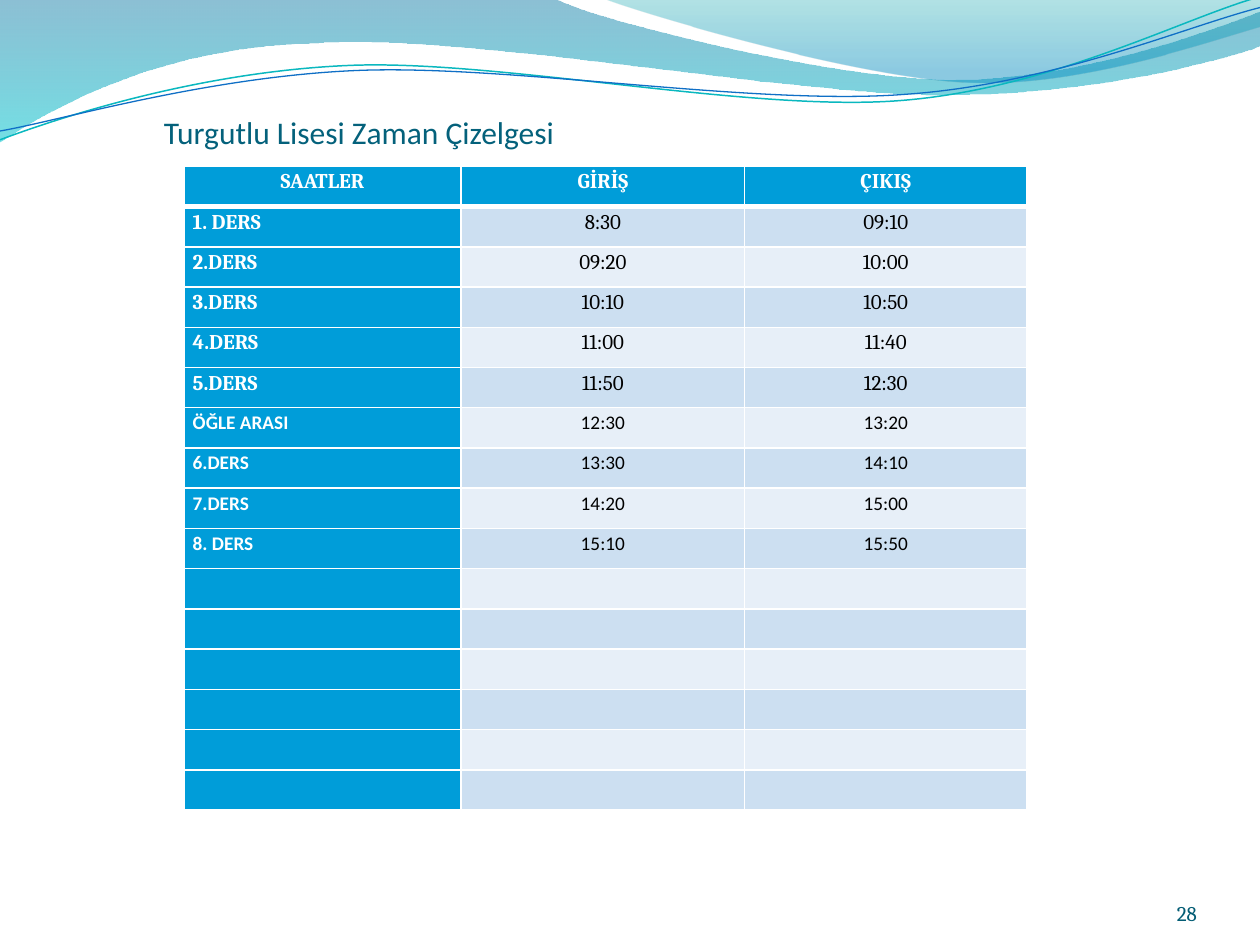
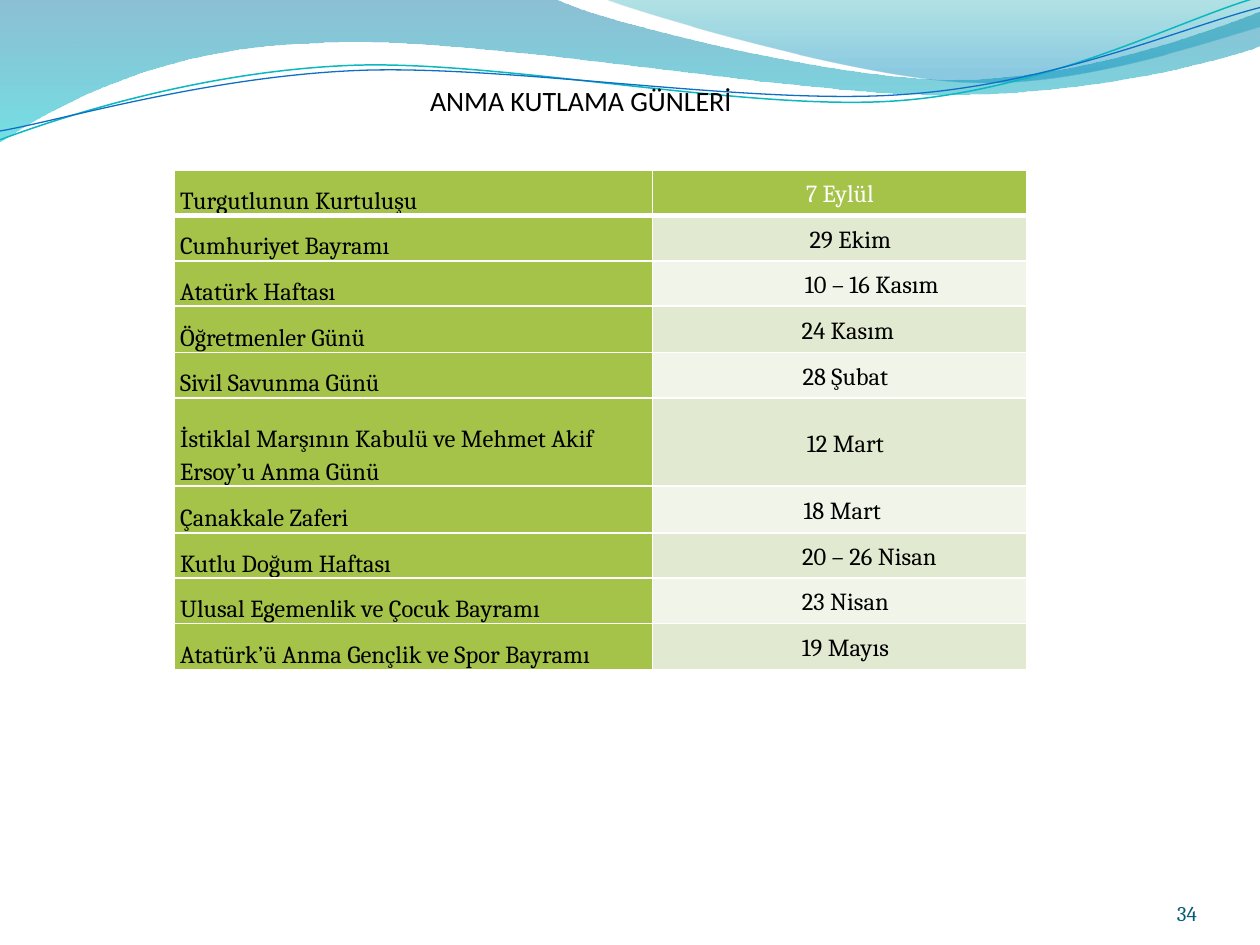
from lxml.etree import SubElement
from pptx import Presentation
from pptx.dml.color import RGBColor
from pptx.enum.text import MSO_ANCHOR, MSO_AUTO_SIZE, PP_ALIGN
from pptx.oxml.ns import qn
from pptx.util import Inches, Pt

# Colours and fonts
WHITE, BLACK = "FFFFFF", "000000"
TITLE_TEAL, NUMBER_TEAL = "04617B", "045D75"
BLUE, BLUE_BANDS = "009DD9", ("CCDFF1", "E7EFF8")
GREEN, GREEN_BANDS = "A5C249", ("E1E9D0", "F0F4E9")
SANS, SERIF = "Calibri", "Cambria"

# Waves: a start point, then straight (2 numbers) or curved (6 numbers) pieces
WAVE_FILLS = [
    ([(0, 0), (4.4, -0.01), (4.76, 0.17, 6.64, 0.63, 7.58, 0.63),
      (8.53, 0.63, 9.58, 0.26, 10, 0.09), (10.01, 0.36),
      (9.83, 0.44, 8.7, 0.76, 7.46, 0.75), (6.22, 0.75, 3.82, 0.28, 2.57, 0.34),
      (1.29, 0.36, 0.46, 0.83, -0.01, 1.13), (0, 0)],
     [(0, "0074A1", 45), (1, "00C6CF", 55)]),
    ([(4.79, -0.01), (5.09, 0.11, 6.82, 0.62, 7.69, 0.65),
      (8.56, 0.69, 9.61, 0.32, 10, 0.21), (10, 0), (4.79, -0.01)],
     [(0, "00A1A9", 30), (0.8, "008BBF", 45)]),
]
WAVE_LINES = [
    ([(0, 1.11), (0.48, 0.93, 1.58, 0.57, 2.77, 0.52),
      (3.95, 0.47, 5.93, 0.89, 7.13, 0.8), (8.33, 0.71, 9.38, 0.15, 9.98, -0.02)],
     "0AB8BF", 0.85),
    ([(0, 1.04), (0.47, 0.96, 1.64, 0.61, 2.83, 0.56),
      (4.03, 0.51, 5.97, 0.84, 7.17, 0.75), (8.36, 0.67, 9.41, 0.21, 10, 0.06)],
     "0F6FC6", 0.75),
]

# Slide contents
LESSON_HOURS = [
    ("SAATLER", "GİRİŞ", "ÇIKIŞ"),
    ("1. DERS", "8:30", "09:10"),
    ("2.DERS", "09:20", "10:00"),
    ("3.DERS", "10:10", "10:50"),
    ("4.DERS", "11:00", "11:40"),
    ("5.DERS", "11:50", "12:30"),
    ("ÖĞLE ARASI", "12:30", "13:20"),
    ("6.DERS", "13:30", "14:10"),
    ("7.DERS", "14:20", "15:00"),
    ("8. DERS", "15:10", "15:50"),
]
EMPTY_ROWS = 6
LUNCH_ROW = 6

# Occasion, date, indent of the date, row height
OCCASIONS = [
    ("Turgutlunun Kurtuluşu", "7 Eylül", 0, 0.36),
    ("Cumhuriyet Bayramı", "29 Ekim", 0.17, 0.36),
    ("Atatürk Haftası", "10 – 16 Kasım", 0.51, 0.36),
    ("Öğretmenler Günü", "24 Kasım", 0.13, 0.37),
    ("Sivil Savunma Günü", "28 Şubat", 0.09, 0.36),
    ("İstiklal Marşının Kabulü ve Mehmet Akif Ersoy’u Anma Günü", "12 Mart", 0.09, 0.7),
    ("Çanakkale Zaferi", "18 Mart", 0.04, 0.37),
    ("Kutlu Doğum Haftası", "20 – 26 Nisan", 0.47, 0.36),
    ("Ulusal Egemenlik ve Çocuk Bayramı", "23 Nisan", 0.09, 0.36),
    ("Atatürk’ü Anma Gençlik ve Spor Bayramı", "19 Mayıs", 0.09, 0.37),
]


def rgb(color):
    return RGBColor.from_string(color)


class Deck:
    def __init__(self):
        self.prs = Presentation()
        self.prs.slide_width, self.prs.slide_height = Inches(10), Inches(7.5)
        self.layout = self.prs.slide_layouts[5]
        self.s = None

    def new_slide(self, number):
        first = self.s is None
        self.s = self.prs.slides.add_slide(self.layout)
        if first:
            self.waves()
        self.page_number(number)

    # Waves are drawn once and belong to the layout
    def waves(self):
        shapes = []
        for pieces, stops in WAVE_FILLS:
            sp = self.freeform(pieces, True)
            sp.line.fill.background()
            sp.fill.gradient()
            sp.fill.gradient_angle = 270
            for stop, (position, color, _) in zip(sp.fill.gradient_stops, stops):
                stop.position, stop.color.rgb = position, rgb(color)
            for clr, (_, _, alpha) in zip(sp.element.iter(qn("a:srgbClr")), stops):
                SubElement(clr, qn("a:alpha"), val=str(alpha * 1000))
            shapes.append(sp)
        for pieces, color, width in WAVE_LINES:
            sp = self.freeform(pieces, False)
            sp.fill.background()
            sp.line.color.rgb, sp.line.width = rgb(color), Pt(width)
            shapes.append(sp)
        for i, sp in enumerate(shapes):
            sp.element.xpath("./p:nvSpPr/p:cNvPr")[0].set("id", str(101 + i))
            self.layout.shapes.element.append(sp.element)

    def freeform(self, pieces, close):
        points = [(Inches(piece[i]), Inches(piece[i + 1]))
                  for piece in pieces for i in range(0, len(piece), 2)]
        builder = self.s.shapes.build_freeform(*points[0])
        builder.add_line_segments(points[1:], close=close)
        sp = builder.convert_to_shape()
        sp.shadow.inherit = False
        # Join the three points of each curved piece into one Bézier segment
        segments = iter(list(sp.element.iter(qn("a:lnTo"))))
        for piece in pieces[1:]:
            first, *rest = [next(segments) for _ in range(len(piece) // 2)]
            if rest:
                first.tag = qn("a:cubicBezTo")
            for segment in rest:
                first.append(segment[0])
                segment.getparent().remove(segment)
        return sp

    def format_text(self, p, font, size, color, bold=False, align=PP_ALIGN.LEFT):
        p.alignment = align
        for r in p.runs:
            r.font.name, r.font.size = font, Pt(size)
            r.font.bold, r.font.color.rgb = bold, rgb(color)

    def frame(self, sp, text, box, insets, anchor):
        sp.left, sp.top, sp.width, sp.height = map(Inches, box)
        tf = sp.text_frame
        tf.text = text
        tf.word_wrap, tf.auto_size = True, MSO_AUTO_SIZE.NONE
        tf.vertical_anchor = anchor
        (tf.margin_left, tf.margin_top,
         tf.margin_right, tf.margin_bottom) = map(Inches, insets)
        return tf.paragraphs[0]

    def title(self, text, box, size, color, insets, anchor, align):
        p = self.frame(self.s.shapes.title, text, box, insets, anchor)
        self.format_text(p, SANS, size, color, align=align)

    def page_number(self, number):
        box = (8.67, 6.95, 0.83, 0.4)
        sp = self.s.shapes.add_textbox(*map(Inches, box))
        p = self.frame(sp, str(number), box, (0, 0, 0, 0), MSO_ANCHOR.BOTTOM)
        self.format_text(p, SERIF, 12, NUMBER_TEAL, align=PP_ALIGN.RIGHT)

    def table(self, left, top, widths, heights, accent, bands):
        """Table with an accent header row and first column, and banded rows."""
        box = (left, top, sum(widths), sum(heights))
        table = self.s.shapes.add_table(len(heights), len(widths), *map(Inches, box)).table
        for column, width in zip(table.columns, widths):
            column.width = Inches(width)
        for i, (row, height) in enumerate(zip(table.rows, heights)):
            row.height = Inches(height)
            for j, cell in enumerate(row.cells):
                self.borders(cell, top=3 if i == 1 else 1, bottom=3 if i == 0 else 1)
                cell.fill.solid()
                cell.fill.fore_color.rgb = rgb(
                    accent if i == 0 or j == 0 else bands[(i - 1) % 2])
                cell.margin_top = cell.margin_bottom = 0
        return table

    def borders(self, cell, top, bottom):
        tcPr = cell._tc.get_or_add_tcPr()
        for side, width in (("L", 1), ("R", 1), ("T", top), ("B", bottom)):
            ln = SubElement(tcPr, qn("a:ln" + side), w=str(Pt(width)))
            fill = SubElement(ln, qn("a:solidFill"))
            SubElement(fill, qn("a:srgbClr"), val=WHITE)

    def cell(self, cell, text, font, size, color, bold=False, align=PP_ALIGN.LEFT,
             anchor=MSO_ANCHOR.TOP, margin=0.07, indent=0):
        cell.margin_left, cell.margin_right = Inches(margin + indent), Inches(margin)
        cell.vertical_anchor = anchor
        p = cell.text_frame.paragraphs[0]
        p.text, p.line_spacing = text, 1.15
        self.format_text(p, font, size, color, bold, align)


def timetable_slide(deck):
    deck.new_slide(28)
    deck.title("Turgutlu Lisesi Zaman Çizelgesi", (1.3, 0.6, 7.24, 0.6), 18, TITLE_TEAL,
               (0, 0.05, 0, 0), MSO_ANCHOR.BOTTOM, PP_ALIGN.LEFT)
    count = len(LESSON_HOURS) + EMPTY_ROWS
    table = deck.table(1.46, 1.32, (2.2, 2.25, 2.24), [5.11 / count] * count,
                       BLUE, BLUE_BANDS)
    for i, row in enumerate(LESSON_HOURS):
        font, size = (SERIF, 12) if i < LUNCH_ROW else (SANS, 11)
        for j, text in enumerate(row):
            accent = i == 0 or j == 0
            deck.cell(table.cell(i, j), text, font, size, WHITE if accent else BLACK, accent,
                      PP_ALIGN.LEFT if i and j == 0 else PP_ALIGN.CENTER)


def occasions_slide(deck):
    deck.new_slide(34)
    deck.title("ANMA KUTLAMA GÜNLERİ", (0.75, 0.61, 7.72, 0.37), 16, BLACK,
               (0.1, 0.05, 0.1, 0.05), MSO_ANCHOR.MIDDLE, PP_ALIGN.CENTER)
    table = deck.table(1.38, 1.35, (3.8, 2.97), [row[3] for row in OCCASIONS],
                       GREEN, GREEN_BANDS)
    for i, (occasion, date, indent, _) in enumerate(OCCASIONS):
        deck.cell(table.cell(i, 0), occasion, SERIF, 14, BLACK,
                  anchor=MSO_ANCHOR.BOTTOM, margin=0.05)
        deck.cell(table.cell(i, 1), date, SERIF, 14, BLACK if i else WHITE,
                  align=PP_ALIGN.CENTER, anchor=MSO_ANCHOR.MIDDLE, margin=0.05, indent=indent)


def main():
    deck = Deck()
    timetable_slide(deck)
    occasions_slide(deck)
    deck.prs.save("out.pptx")


if __name__ == "__main__":
    main()
